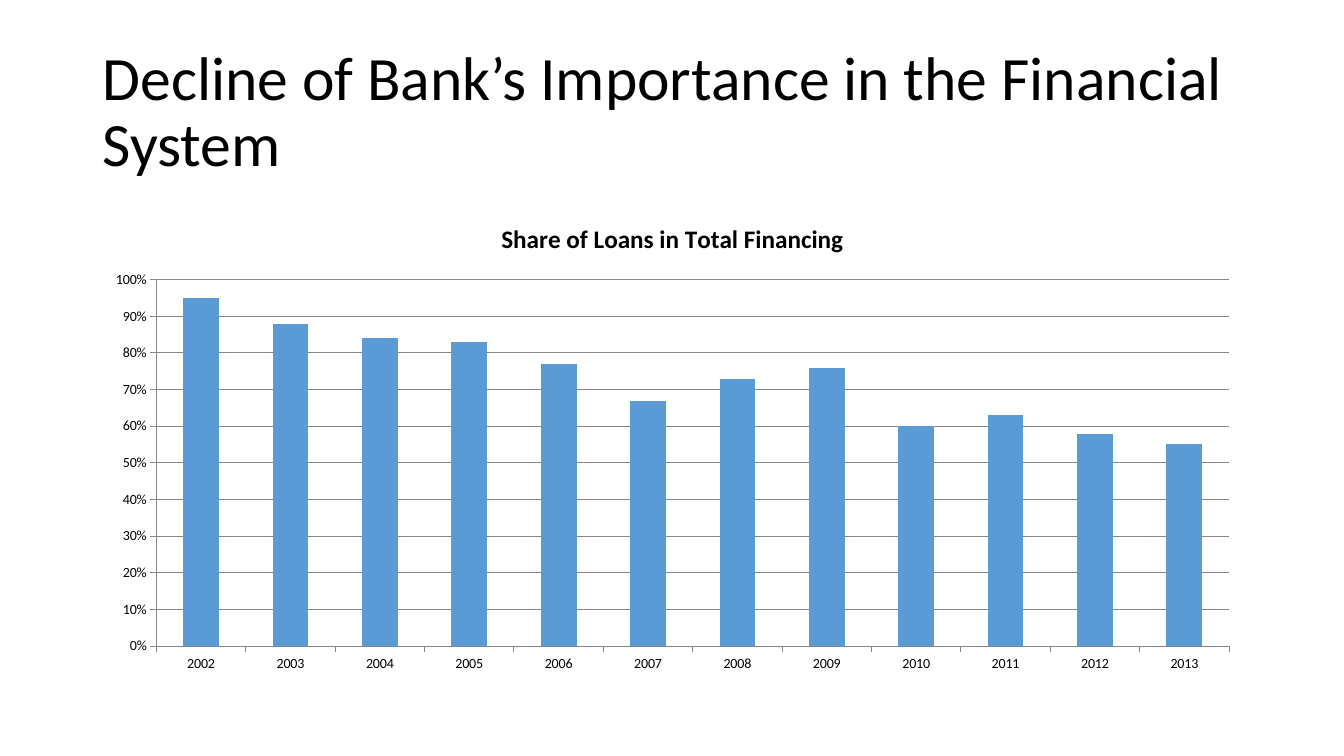
from pptx import Presentation
from pptx.chart.data import CategoryChartData
from pptx.dml.color import RGBColor
from pptx.enum.chart import XL_CHART_TYPE as ChartType, XL_TICK_MARK as TickMark
from pptx.enum.text import MSO_ANCHOR
from pptx.util import Inches, Pt

COLORS = {"text": "000000", "bar": "5B9BD5", "line": "868686"}
FONT = "Calibri"
LOAN_SHARES = [0.95, 0.88, 0.84, 0.83, 0.77, 0.67,
               0.73, 0.76, 0.6, 0.63, 0.58, 0.55]


def set_font(font, size, bold=False):
    font.name = FONT
    font.size = Pt(size)
    font.bold = bold
    font.color.rgb = RGBColor.from_string(COLORS["text"])


deck = Presentation()
deck.slide_width, deck.slide_height = Inches(13.33), Inches(7.5)
page = deck.slides.add_slide(deck.slide_layouts[6])

# Heading
box = page.shapes.add_textbox(Inches(0.92), Inches(0.4), Inches(11.5), Inches(1.45))
box.text_frame.word_wrap = True
box.text_frame.vertical_anchor = MSO_ANCHOR.MIDDLE
para = box.text_frame.paragraphs[0]
para.text = "Decline of Bank’s Importance in the Financial System"
para.line_spacing = 0.9
set_font(para.font, 44)

# Column chart
data = CategoryChartData(number_format="0%")
data.categories = [str(2002 + i) for i in range(len(LOAN_SHARES))]
data.add_series("Series 1", LOAN_SHARES)
chart = page.shapes.add_chart(
    ChartType.COLUMN_CLUSTERED,
    Inches(0.92), Inches(2), Inches(11.5), Inches(4.76), data).chart
set_font(chart.font, 10)
chart.has_legend = False
chart.has_title = True
chart_title = chart.chart_title.text_frame.paragraphs[0]
chart_title.text = "Share of Loans in Total Financing"
set_font(chart_title.font, 18, bold=True)

plot = chart.plots[0]
plot.vary_by_categories = False
plot.gap_width = 150
bar_fill = plot.series[0].format.fill
bar_fill.solid()
bar_fill.fore_color.rgb = RGBColor.from_string(COLORS["bar"])

years, shares = chart.category_axis, chart.value_axis
shares.minimum_scale, shares.maximum_scale = 0, 1
shares.major_unit = 0.1
shares.tick_labels.number_format = "0%"
shares.tick_labels.number_format_is_linked = False
shares.has_major_gridlines = True
for axis in (years, shares):
    axis.major_tick_mark = TickMark.OUTSIDE
    axis.minor_tick_mark = TickMark.NONE
for part in (years, shares, shares.major_gridlines):
    part.format.line.color.rgb = RGBColor.from_string(COLORS["line"])
    part.format.line.width = Pt(0.75)

deck.save("out.pptx")
